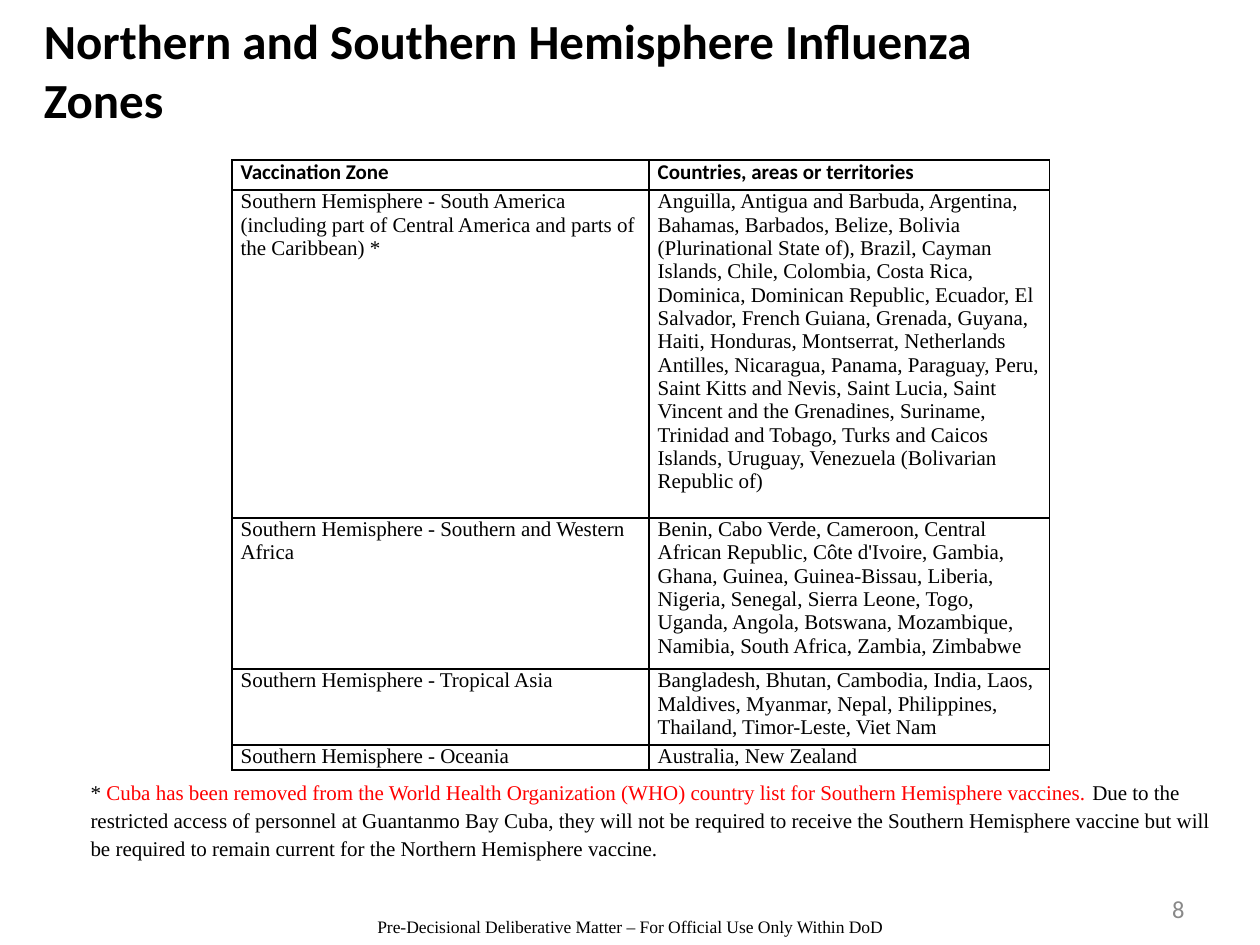
from lxml import etree
from pptx import Presentation
from pptx.dml.color import RGBColor
from pptx.enum.text import MSO_ANCHOR, PP_ALIGN
from pptx.oxml.ns import qn
from pptx.util import Inches, Pt

MIDDLE, TOP = MSO_ANCHOR.MIDDLE, MSO_ANCHOR.TOP
LEFT, CENTER, RIGHT = PP_ALIGN.LEFT, PP_ALIGN.CENTER, PP_ALIGN.RIGHT
SANS, SERIF = "Calibri", "Times New Roman"
COLORS = {"black": "000000", "red": "FF0000", "gray": "898989"}

# Content
TITLE = "Northern and Southern Hemisphere Influenza Zones"
FOOTER = "Pre-Decisional Deliberative Matter – For Official Use Only Within DoD"
NUMBER = "8"
ZONES = [
    ("Vaccination Zone", "Countries, areas or territories"),
    ("Southern Hemisphere - South America (including part of Central America "
     "and parts of the Caribbean) *",
     "Anguilla, Antigua and Barbuda, Argentina, Bahamas, Barbados, Belize, "
     "Bolivia (Plurinational State of), Brazil, Cayman Islands, Chile, "
     "Colombia, Costa Rica, Dominica, Dominican Republic, Ecuador, "
     "El Salvador, French Guiana, Grenada, Guyana, Haiti, Honduras, "
     "Montserrat, Netherlands Antilles, Nicaragua, Panama, Paraguay, Peru, "
     "Saint Kitts and Nevis, Saint Lucia, Saint Vincent and the Grenadines, "
     "Suriname, Trinidad and Tobago, Turks and Caicos Islands, Uruguay, "
     "Venezuela (Bolivarian Republic of)"),
    ("Southern Hemisphere - Southern and Western Africa",
     "Benin, Cabo Verde, Cameroon, Central African Republic, Côte d'Ivoire, "
     "Gambia, Ghana, Guinea, Guinea-Bissau, Liberia, Nigeria, Senegal, "
     "Sierra Leone, Togo, Uganda, Angola, Botswana, Mozambique, Namibia, "
     "South Africa, Zambia, Zimbabwe"),
    ("Southern Hemisphere - Tropical Asia",
     "Bangladesh, Bhutan, Cambodia, India, Laos, Maldives, Myanmar, Nepal, "
     "Philippines, Thailand, Timor-Leste, Viet Nam"),
    ("Southern Hemisphere - Oceania", "Australia, New Zealand"),
]
WIDTHS = [3.31, 3.18]
HEIGHTS = [0.24, 2.4, 1.11, 0.55, 0.18]
NOTE = [
    ("* ", "black"),
    ("Cuba has been removed from the World Health Organization (WHO) country "
     "list for Southern Hemisphere vaccines. ", "red"),
    ("Due to the restricted access of personnel at Guantanmo Bay Cuba, they "
     "will not be required to receive the Southern Hemisphere vaccine but "
     "will be required to remain current for the Northern Hemisphere "
     "vaccine.", "black"),
]


def style(run, size, face, color="black", bold=False):
    font = run.font
    font.size, font.name, font.bold = Pt(size), face, bold
    font.color.rgb = RGBColor.from_string(COLORS[color])


def add_text(slide, place, parts, size, face, bold=False, align=LEFT,
             anchor=MIDDLE, inset=None):
    box = slide.shapes.add_textbox(*map(Inches, place))
    frame = box.text_frame
    frame.word_wrap = True
    frame.vertical_anchor = anchor
    if inset is not None:
        frame.margin_left = frame.margin_right = Inches(inset)
        frame.margin_top = frame.margin_bottom = Inches(inset)
    para = frame.paragraphs[0]
    para.alignment = align
    for text, color in parts:
        run = para.add_run()
        run.text = text
        style(run, size, face, color, bold)
    return para


def add_border(cell):
    props = cell._tc.get_or_add_tcPr()
    for side in ("a:lnL", "a:lnR", "a:lnT", "a:lnB"):
        line = etree.SubElement(props, qn(side), w=str(Pt(1)))
        fill = etree.SubElement(line, qn("a:solidFill"))
        etree.SubElement(fill, qn("a:srgbClr"), val=COLORS["black"])


def add_zones(slide):
    frame = slide.shapes.add_table(
        len(ZONES), len(WIDTHS), Inches(1.84), Inches(1.27),
        Inches(sum(WIDTHS)), Inches(sum(HEIGHTS)))
    table = frame.table
    table.first_row = table.horz_banding = False
    for col, width in zip(table.columns, WIDTHS):
        col.width = Inches(width)
    for r, (row, height) in enumerate(zip(ZONES, HEIGHTS)):
        table.rows[r].height = Inches(height)
        for c, text in enumerate(row):
            cell = table.cell(r, c)
            cell.margin_left = cell.margin_right = Inches(0.07)
            cell.margin_top = cell.margin_bottom = 0
            add_border(cell)
            cell.fill.background()
            cell.text_frame.text = text
            run = cell.text_frame.paragraphs[0].runs[0]
            style(run, 12, SERIF if r else SANS, bold=r == 0)


def main():
    deck = Presentation()
    deck.slide_width, deck.slide_height = Inches(10), Inches(7.5)
    slide = deck.slides.add_slide(deck.slide_layouts[6])

    # Footer, title and slide number
    add_text(slide, (0, 6.26, 10, 2.19), [(FOOTER, "black")], 10, SERIF,
             align=CENTER, inset=1)
    add_text(slide, (0.25, 0.17, 8.17, 0.76), [(TITLE, "black")], 28, SANS,
             bold=True)
    add_text(slide, (8.33, 7.07, 1.17, 0.28), [(NUMBER, "gray")], 14, SANS,
             align=RIGHT)

    # Zone table and its footnote
    add_zones(slide)
    note = add_text(slide, (0.62, 6.12, 9.15, 0.71), NOTE, 12, SERIF,
                    anchor=TOP)
    note.line_spacing = 1.1

    deck.save("out.pptx")


if __name__ == "__main__":
    main()
